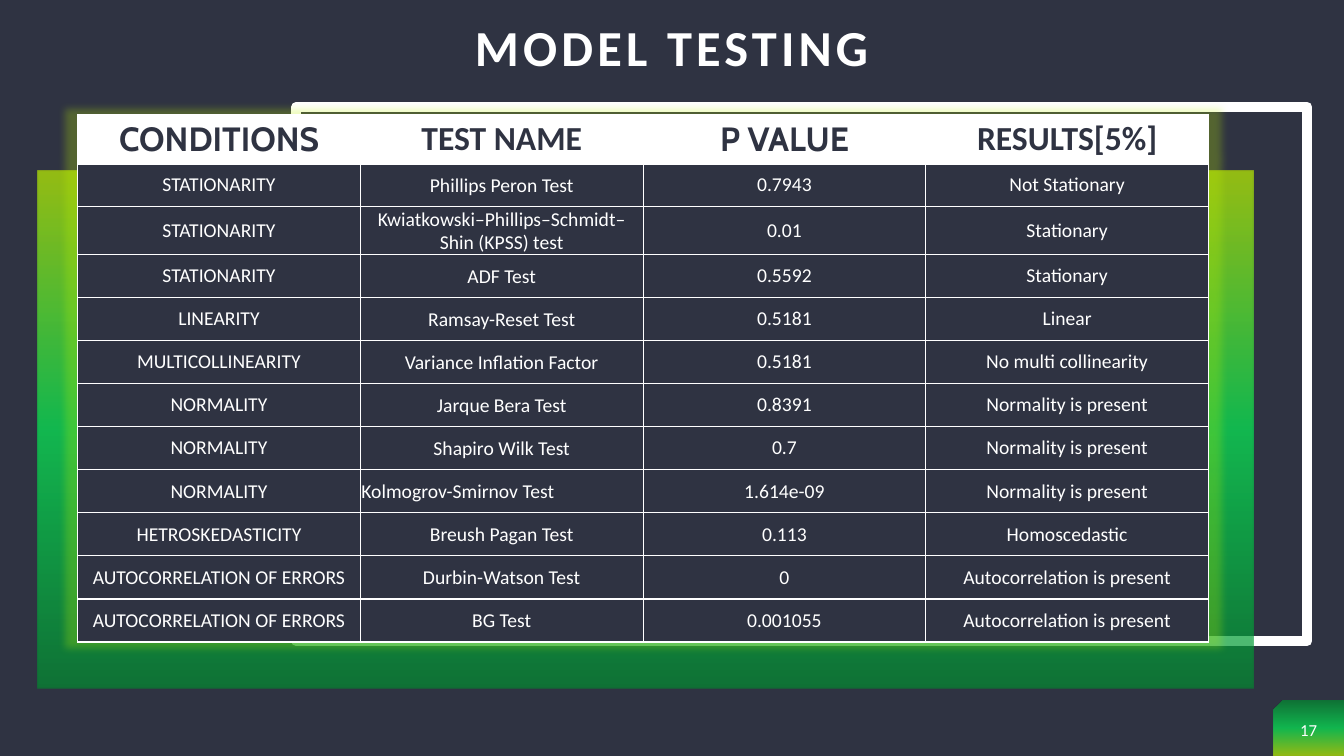
import collections
import pptx
import pptx.dml.color
import pptx.enum.shapes
import pptx.enum.text
import pptx.oxml
import pptx.oxml.ns
import pptx.util

COLORS = {"night": "2F3342", "white": "FFFFFF", "forest": "038B30",
          "green": "05EE55", "lime": "C0F400"}
SHAPES = pptx.enum.shapes.MSO_SHAPE
ALIGN = pptx.enum.text.PP_ALIGN
MIDDLE = pptx.enum.text.MSO_ANCHOR.MIDDLE
SLIDE_WIDTH = pptx.util.Inches(13.33)
SLIDE_HEIGHT = pptx.util.Inches(7.5)
Box = collections.namedtuple("Box", "left top width height")

HEADERS = ["CONDITIONS", "TEST NAME", "P VALUE", "RESULTS[5%]"]
HEADER_FONTS = ["Cabin", "Calibri", "Cabin", "Calibri"]
TESTS = [
    ["STATIONARITY", "Phillips Peron Test", "0.7943", "Not Stationary"],
    ["STATIONARITY", "Kwiatkowski–Phillips–Schmidt–Shin (KPSS) test", "0.01", "Stationary"],
    ["STATIONARITY", "ADF Test", "0.5592", "Stationary"],
    ["LINEARITY", "Ramsay-Reset Test", "0.5181", "Linear"],
    ["MULTICOLLINEARITY", "Variance Inflation Factor", "0.5181", "No multi collinearity"],
    ["NORMALITY", "Jarque Bera Test", "0.8391", "Normality is present"],
    ["NORMALITY", "Shapiro Wilk Test", "0.7", "Normality is present"],
    ["NORMALITY", "Kolmogrov-Smirnov Test", "1.614e-09", "Normality is present"],
    ["HETROSKEDASTICITY", "Breush Pagan Test", "0.113", "Homoscedastic"],
    ["AUTOCORRELATION OF ERRORS", "Durbin-Watson Test", "0", "Autocorrelation is present"],
    ["AUTOCORRELATION OF ERRORS", "BG Test", "0.001055", "Autocorrelation is present"],
]
LEFT_ALIGNED = "Kolmogrov-Smirnov Test"


def share(left, top, width, height):
    """Box from percentages of the slide's width and height."""
    return Box(int(SLIDE_WIDTH * left / 100), int(SLIDE_HEIGHT * top / 100),
               int(SLIDE_WIDTH * width / 100), int(SLIDE_HEIGHT * height / 100))


def color(name):
    return pptx.dml.color.RGBColor.from_string(COLORS[name])


def xml(text):
    return pptx.oxml.parse_xml(text.replace(" ", f" {pptx.oxml.ns.nsdecls('a')} ", 1))


def write(frame, text, size, font="Calibri", ink="white", bold=False,
          align=ALIGN.CENTER, line_spacing=None, tracking=None):
    frame.word_wrap = True
    para = frame.paragraphs[0]
    para.alignment = align
    para.line_spacing = line_spacing
    span = para.add_run()
    span.text = text
    span.font.size = pptx.util.Pt(size)
    span.font.name = font
    span.font.bold = bold
    span.font.color.rgb = color(ink)
    if tracking:
        span.font._element.set("spc", str(tracking * 100))


def add_text(page, box, text, size, **style):
    frame = page.shapes.add_textbox(*box).text_frame
    frame.vertical_anchor = MIDDLE
    write(frame, text, size, **style)


def add_gradient_shape(page, kind, box, angle):
    shape = page.shapes.add_shape(kind, *box)
    shape.shadow.inherit = False
    shape.line.fill.background()
    stops = "".join(
        f'<a:gs pos="{position}000"><a:srgbClr val="{COLORS[name]}">'
        '<a:alpha val="70000"/></a:srgbClr></a:gs>'
        for position, name in ((0, "forest"), (50, "green"), (100, "lime")))
    properties = shape._element.spPr
    properties.find(pptx.oxml.ns.qn("a:prstGeom")).addnext(xml(
        f'<a:gradFill rotWithShape="1"><a:gsLst>{stops}</a:gsLst>'
        f'<a:lin ang="{angle * 60000}" scaled="0"/></a:gradFill>'))
    return shape


def add_page_badge(page, box, number):
    badge = add_gradient_shape(page, SHAPES.SNIP_1_RECTANGLE, box, 90)
    badge._element.spPr.xfrm.set("flipH", "1")
    label = Box(box.left, box.top + int(box.height * 0.11),
                box.width, int(box.height * 0.82))
    add_text(page, label, number, 12)


def add_frame(page, box):
    frame = page.shapes.add_shape(SHAPES.RECTANGLE, *box)
    frame.shadow.inherit = False
    frame.fill.background()
    frame.line.color.rgb = color("white")
    frame.line.width = pptx.util.Pt(7)


def style_cell(cell, fill, margins, bottom_width):
    cell.vertical_anchor = MIDDLE
    (cell.margin_left, cell.margin_top,
     cell.margin_right, cell.margin_bottom) = map(pptx.util.Inches, margins)
    cell.fill.solid()
    cell.fill.fore_color.rgb = color(fill)
    properties = cell._tc.get_or_add_tcPr()
    for index, (side, width) in enumerate(zip("LRTB", (1, 1, 1, bottom_width))):
        properties.insert(index, xml(
            f'<a:ln{side} w="{pptx.util.Pt(width)}"><a:solidFill>'
            f'<a:srgbClr val="{COLORS["white"]}"/></a:solidFill></a:ln{side}>'))


def add_test_table(page, box):
    rows = [HEADERS] + TESTS
    table = page.shapes.add_table(len(rows), len(HEADERS), *box).table
    table.first_row = table.horz_banding = False
    # Soft lime halo around the table
    table._tbl.tblPr.insert(0, xml(
        '<a:effectLst ><a:outerShdw blurRad="63500" sx="102000" sy="102000" algn="ctr" '
        f'rotWithShape="0"><a:srgbClr val="{COLORS["lime"]}"><a:alpha val="25000"/>'
        '</a:srgbClr></a:outerShdw></a:effectLst>'))
    for column in table.columns:
        column.width = box.width // len(HEADERS)
    for row_index, texts in enumerate(rows):
        table.rows[row_index].height = box.height // len(rows)
        is_header = row_index == 0
        for column_index, text in enumerate(texts):
            cell = table.cell(row_index, column_index)
            is_tight = column_index == 1 and not is_header
            margins = (0.01, 0.01, 0.01, 0) if is_tight else (0.07, 0.04, 0.07, 0.04)
            style_cell(cell, "white" if is_header else "night", margins,
                       3 if is_header else 1)
            if is_header:
                write(cell.text_frame, text, 24, font=HEADER_FONTS[column_index],
                      ink="night", bold=True)
            else:
                write(cell.text_frame, text, 14,
                      align=ALIGN.LEFT if text == LEFT_ALIGNED else ALIGN.CENTER)


def build_table_slide(deck):
    page = deck.slides.add_slide(deck.slide_layouts[6])
    page.background.fill.solid()
    page.background.fill.fore_color.rgb = color("night")
    # Page number and title
    add_page_badge(page, share(94.73, 92.67, 5.27, 7.33), "17")
    add_text(page, share(4.88, -2, 90.23, 17.33), "MODEL TESTING", 36,
             bold=True, line_spacing=0.9, tracking=3)
    # Backdrop: white outline under a translucent panel
    add_frame(page, share(22.05, 14.13, 75.23, 70.67))
    add_gradient_shape(page, SHAPES.RECTANGLE, share(2.78, 22.53, 90.45, 68.53), 270)
    # Test results
    add_test_table(page, share(5.78, 15.2, 84.15, 68.4))


def main():
    deck = pptx.Presentation()
    deck.slide_width = SLIDE_WIDTH
    deck.slide_height = SLIDE_HEIGHT
    build_table_slide(deck)
    deck.save("out.pptx")


if __name__ == "__main__":
    main()
